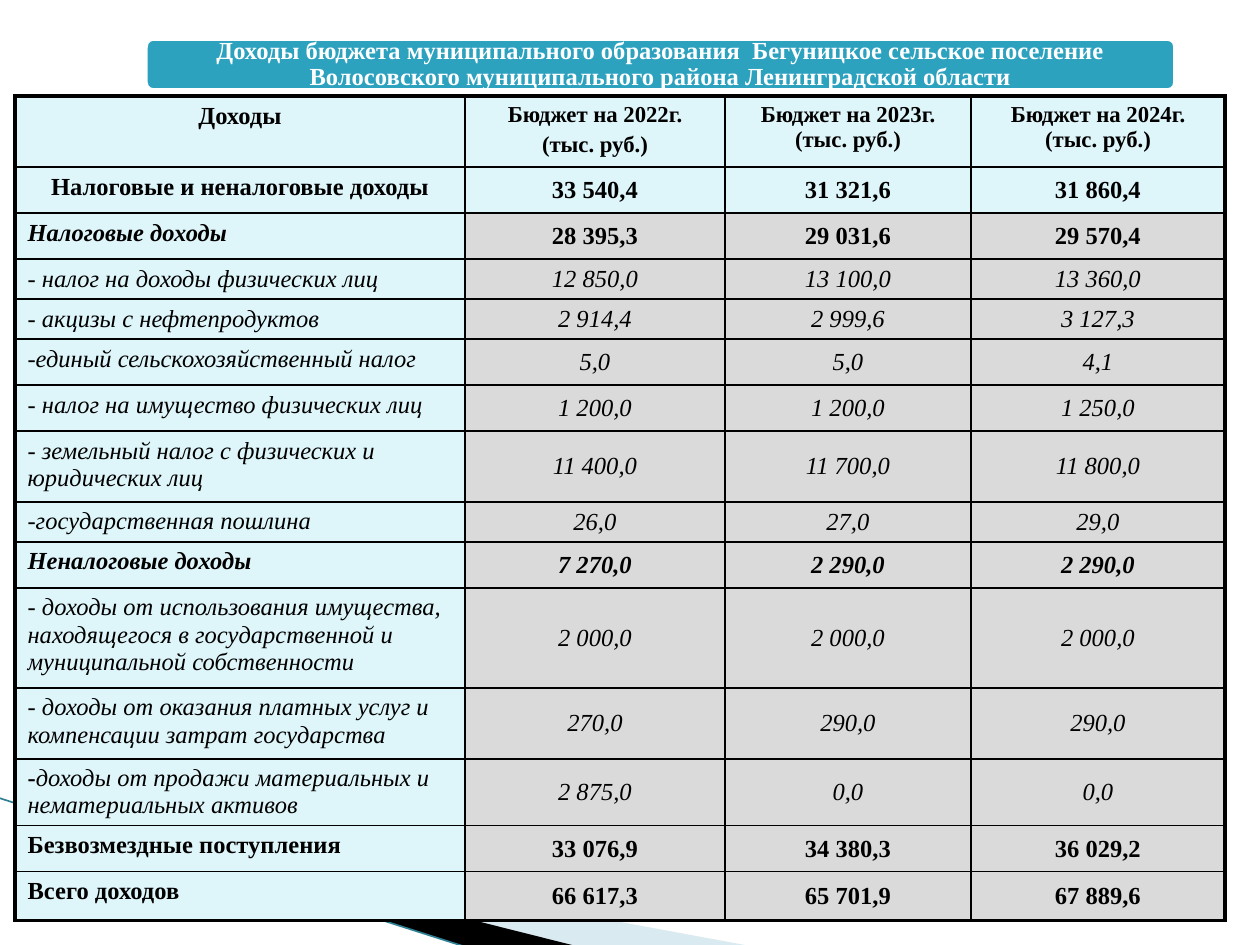
"""Budget revenue slide: a title banner above a table of revenues for 2022-2024."""
from lxml import etree
from pptx import Presentation
from pptx import util as u
from pptx.dml.color import RGBColor
from pptx.enum import shapes, text
from pptx.oxml.ns import qn

PX = 914400 / 126
FONT = "Times New Roman"
BLACK, WHITE, PALE, GREY = "000000", "FFFFFF", "DEF5FA", "DADADA"
TITLE = ("Доходы бюджета муниципального образования  Бегуницкое сельское "
         "поселение Волосовского муниципального района Ленинградской области")
HEADER = [["Доходы"], ["Бюджет на 2022г.", "(тыс. руб.)"],
          ["Бюджет на 2023г. (тыс. руб.)"], ["Бюджет на 2024г. (тыс. руб.)"]]
HEADER_HEIGHT = 71
COLS = [450, 260, 246, 254]
# height, label style, value style, label, values; styles: b bold, i italic
ROWS = [
    (46, "b", "b", "Налоговые и неналоговые доходы", ["33 540,4", "31 321,6", "31 860,4"]),
    (46, "bi", "b", "Налоговые доходы", ["28 395,3", "29 031,6", "29 570,4"]),
    (40, "i", "i", "- налог на доходы физических лиц", ["12 850,0", "13 100,0", "13 360,0"]),
    (40, "i", "i", "- акцизы с нефтепродуктов", ["2 914,4", "2 999,6", "3 127,3"]),
    (46, "i", "i", "-единый сельскохозяйственный налог", ["5,0", "5,0", "4,1"]),
    (46, "i", "i", "- налог на имущество физических лиц", ["1 200,0", "1 200,0", "1 250,0"]),
    (71, "i", "i", "- земельный налог с физических и юридических лиц",
     ["11 400,0", "11 700,0", "11 800,0"]),
    (40, "i", "i", "-государственная пошлина", ["26,0", "27,0", "29,0"]),
    (46, "bi", "bi", "Неналоговые доходы", ["7 270,0", "2 290,0", "2 290,0"]),
    (100, "i", "i", "- доходы от использования имущества, находящегося в "
     "государственной и муниципальной собственности", ["2 000,0", "2 000,0", "2 000,0"]),
    (71, "i", "i", "- доходы от оказания платных услуг и компенсации затрат государства",
     ["270,0", "290,0", "290,0"]),
    (67, "i", "i", [("-", "b"), ("доходы от продажи материальных и нематериальных активов", "i")],
     ["2 875,0", "0,0", "0,0"]),
    (46, "b", "b", "Безвозмездные поступления", ["33 076,9", "34 380,3", "36 029,2"]),
    (49, "b", "b", "Всего доходов", ["66 617,3", "65 701,9", "67 889,6"]),
]
WEDGES = [("A0CBDC", 40, [(69, 820), (750, 946), (575, 946), (69, 819)]),
          (BLACK, 100, [(67, 818), (576, 946), (469, 948), (68, 819)])]


def px(n):
    return round(n * PX)


def rgb(value):
    return RGBColor.from_string(value)


def style_font(font, size, style, color=BLACK):
    font.name, font.size, font.color.rgb = FONT, u.Pt(size), rgb(color)
    font.bold, font.italic = "b" in style, "i" in style


def add_wedge(slide, color, alpha, points):
    builder = slide.shapes.build_freeform(*points[0], scale=PX)
    builder.add_line_segments(points[1:], close=True)
    sp = builder.convert_to_shape()
    sp.shadow.inherit = False
    sp.fill.solid()
    sp.fill.fore_color.rgb = rgb(color)
    sp.line.fill.background()
    if alpha < 100:
        clr = sp.fill._xPr.find(".//" + qn("a:srgbClr"))
        etree.SubElement(clr, qn("a:alpha"), val=str(alpha * 1000))


def add_accent_line(slide):
    line = slide.shapes.add_connector(
        shapes.MSO_CONNECTOR.STRAIGHT, px(-1), px(798), px(469), px(948))
    line.line.color.rgb = rgb("2F7F95")
    line.line.width = u.Pt(0.95)
    etree.SubElement(line._element.spPr, qn("a:effectLst"))


def add_banner(slide):
    sp = slide.shapes.add_shape(
        shapes.MSO_SHAPE.ROUNDED_RECTANGLE, px(144), px(37), px(1033), px(55))
    sp.shadow.inherit = False
    sp.fill.solid()
    sp.fill.fore_color.rgb = rgb("2DA2BF")
    sp.line.color.rgb = rgb(WHITE)
    sp.line.width = u.Pt(4.33)
    tf = sp.text_frame
    tf.word_wrap = True
    tf.vertical_anchor = text.MSO_ANCHOR.MIDDLE
    tf.margin_left = tf.margin_right = tf.margin_top = tf.margin_bottom = px(8)
    p = tf.paragraphs[0]
    p.text, p.alignment, p.line_spacing = TITLE, text.PP_ALIGN.CENTER, 0.9
    style_font(p.font, 14, "b", WHITE)


def set_borders(cell, widths):
    tc_pr = cell._tc.get_or_add_tcPr()
    for side, width in zip("LRTB", widths):
        ln = etree.SubElement(tc_pr, qn("a:ln" + side), w=str(u.Pt(width)))
        fill = etree.SubElement(ln, qn("a:solidFill"))
        etree.SubElement(fill, qn("a:srgbClr"), val=BLACK)


def fill_cell(cell, paragraphs, size, style, centered):
    tf = cell.text_frame
    for i, content in enumerate(paragraphs):
        p = tf.add_paragraph() if i else tf.paragraphs[0]
        p.alignment = text.PP_ALIGN.CENTER if centered else text.PP_ALIGN.LEFT
        if i:
            p.space_before = u.Pt(3)
        if isinstance(content, str):
            p.text = content
            style_font(p.font, size, style)
        else:
            for part, part_style in content:
                r = p.add_run()
                r.text = part
                style_font(r.font, size, part_style)


def add_revenue_table(slide):
    heights = [HEADER_HEIGHT] + [row[0] for row in ROWS]
    last_row, last_col = len(heights) - 1, len(COLS) - 1
    table = slide.shapes.add_table(
        len(heights), len(COLS), px(15), px(96), px(sum(COLS)), px(sum(heights))).table
    for column, width in zip(table.columns, COLS):
        column.width = px(width)
    for row, height in zip(table.rows, heights):
        row.height = px(height)
    for i in range(len(heights)):
        for j in range(len(COLS)):
            cell = table.cell(i, j)
            edges = (j == 0, j == last_col, i == 0, i == last_row)
            set_borders(cell, [2.25 if edge else 1 for edge in edges])
            cell.fill.solid()
            cell.fill.fore_color.rgb = rgb(PALE if i < 2 or j == 0 else GREY)
            if i == 0:
                fill_cell(cell, HEADER[j], 13 if j else 14, "b", True)
                continue
            _, label_style, value_style, label, values = ROWS[i - 1]
            if j == 0:
                fill_cell(cell, [label], 14, label_style, i == 1)
            else:
                cell.vertical_anchor = text.MSO_ANCHOR.MIDDLE
                fill_cell(cell, [values[j - 1]], 14, value_style, True)


def main():
    prs = Presentation()
    prs.slide_width, prs.slide_height = px(1260), px(945)
    slide = prs.slides.add_slide(prs.slide_layouts[6])
    for wedge in WEDGES:
        add_wedge(slide, *wedge)
    add_accent_line(slide)
    add_banner(slide)
    add_revenue_table(slide)
    prs.save("out.pptx")


if __name__ == "__main__":
    main()
